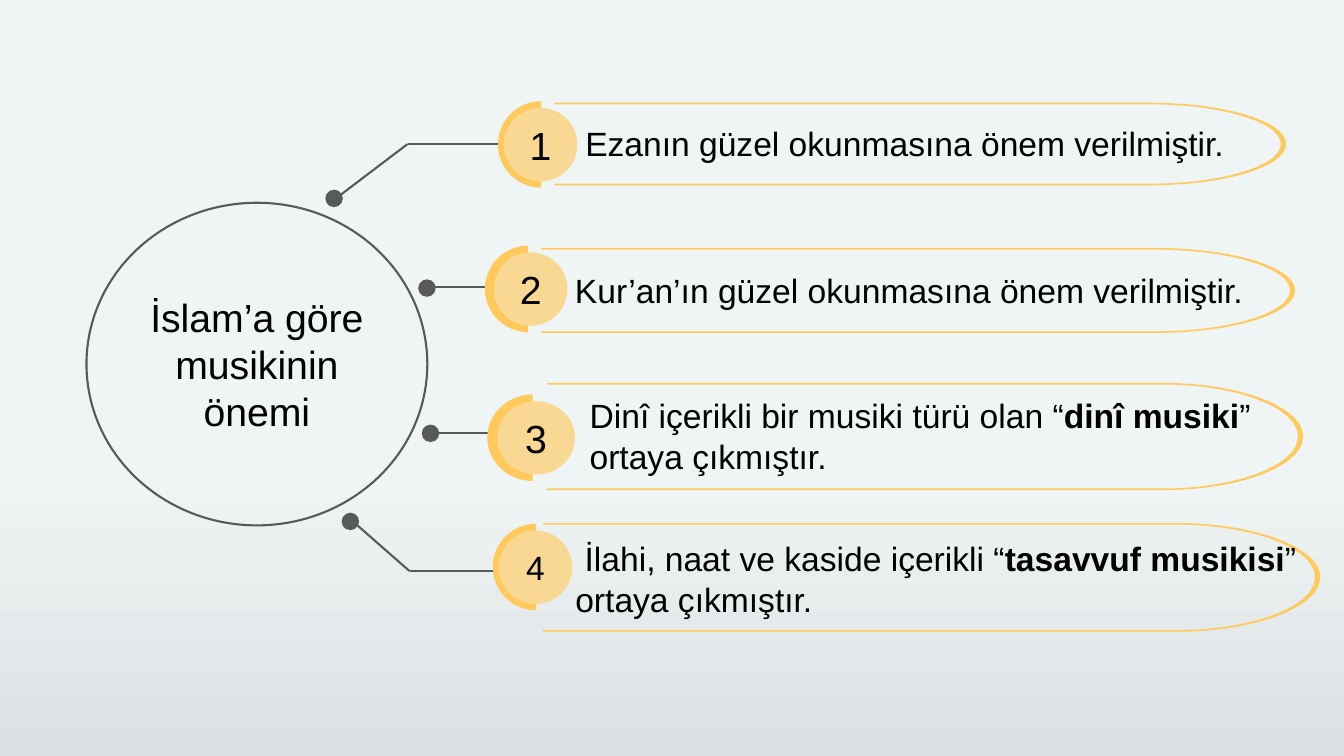
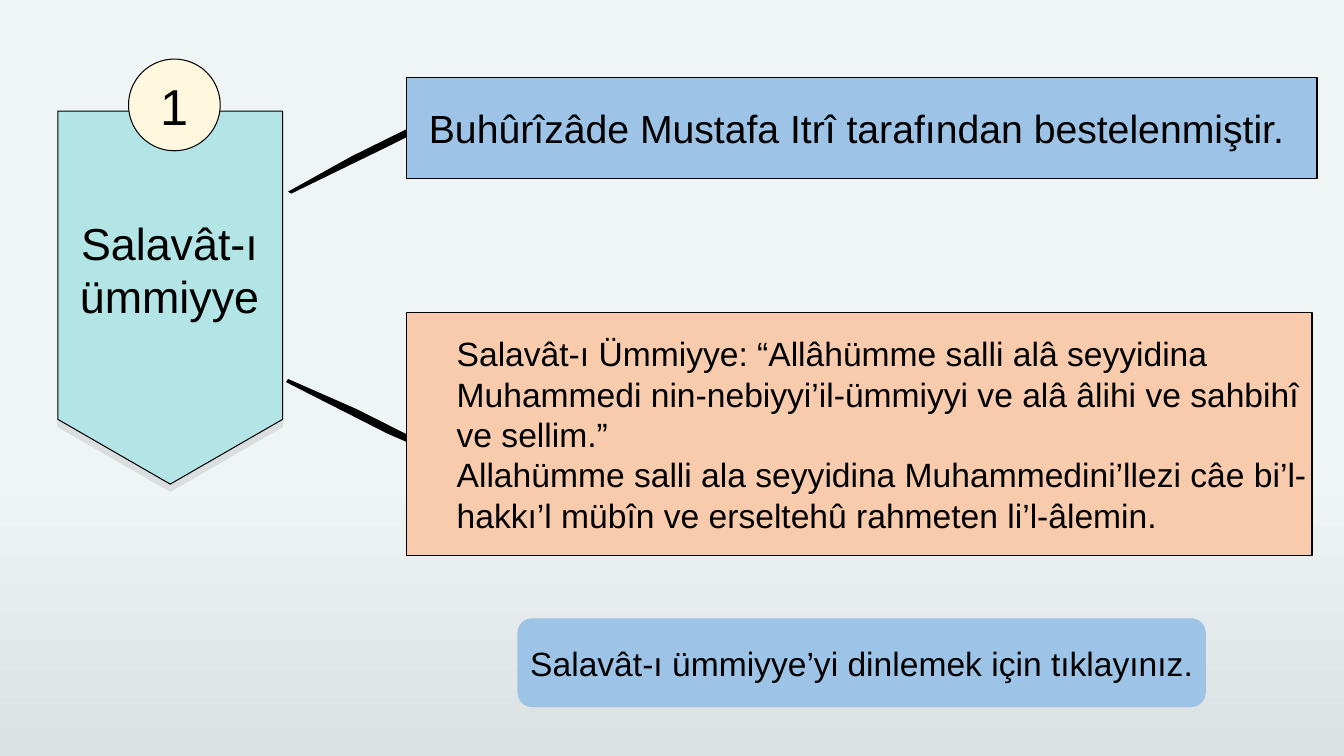
import lxml.etree
import pptx
import pptx.dml.color
import pptx.enum.shapes
import pptx.enum.text
import pptx.oxml.ns
import pptx.util

Cm = pptx.util.Cm
Pt = pptx.util.Pt
RGBColor = pptx.dml.color.RGBColor
PRESET = pptx.enum.shapes.MSO_SHAPE
STRAIGHT = pptx.enum.shapes.MSO_CONNECTOR.STRAIGHT
ALIGN = pptx.enum.text.PP_ALIGN
ANCHOR = pptx.enum.text.MSO_ANCHOR
qn = pptx.oxml.ns.qn

BLACK = RGBColor(0x00, 0x00, 0x00)
GREY = RGBColor(0x59, 0x59, 0x59)
AMBER = RGBColor(0xFF, 0xC9, 0x5C)
SAND = RGBColor(0xF9, 0xD8, 0x93)
CREAM = RGBColor(0xFF, 0xF8, 0xDE)
AQUA = RGBColor(0xB3, 0xE5, 0xE6)
BLUE = RGBColor(0x9D, 0xC3, 0xE6)
PEACH = RGBColor(0xF8, 0xCB, 0xAD)
MIST = RGBColor(0xEF, 0xF4, 0xF5)
FOG = RGBColor(0xDC, 0xE1, 0xE4)

ROUNDNESS = 0.55
CENTERED = {"alignment": ALIGN.CENTER}
LEFT = {"alignment": ALIGN.LEFT}
INSETS = ("margin_left", "margin_top", "margin_right", "margin_bottom")
MIDDLE = {"word_wrap": True, "vertical_anchor": ANCHOR.MIDDLE}
PADDED = MIDDLE | dict.fromkeys(INSETS, Cm(0.25))
TIGHT = MIDDLE | dict.fromkeys(INSETS, 0)
FLUSH_TOP = TIGHT | {"vertical_anchor": ANCHOR.TOP}


def paint(shape, fill=None, line=None, width=0.75):
    shape.shadow.inherit = False
    if fill is None:
        shape.fill.background()
    else:
        shape.fill.solid()
        shape.fill.fore_color.rgb = fill
    if line is None:
        shape.line.fill.background()
    else:
        shape.line.color.rgb = line
        shape.line.width = Pt(width)
    return shape


def write(shape, paragraphs, size, frame_format, paragraph_format, indent=0):
    frame = shape.text_frame
    for key, value in frame_format.items():
        setattr(frame, key, value)
    for index, pieces in enumerate(paragraphs):
        paragraph = frame.add_paragraph() if index else frame.paragraphs[0]
        for key, value in paragraph_format.items():
            setattr(paragraph, key, value)
        if indent:
            paragraph._p.get_or_add_pPr().set("marL", str(Cm(indent)))
        for position, piece in enumerate(pieces):
            run = paragraph.add_run()
            run.text = piece
            font_format = {"name": "Arial", "size": Pt(size), "bold": position == 1}
            for key, value in font_format.items():
                setattr(run.font, key, value)
            run.font.color.rgb = BLACK


deck = pptx.Presentation()
deck.slide_width = Cm(33.87)
deck.slide_height = Cm(19.05)
blank = deck.slide_layouts[6]

importance = deck.slides.add_slide(blank)
shapes = importance.shapes

backdrop = paint(shapes.add_shape(PRESET.RECTANGLE, 0, 0, deck.slide_width, deck.slide_height))
backdrop.fill.gradient()
backdrop.fill.gradient_angle = 270
for stop, (position, color) in zip(backdrop.fill.gradient_stops, ((0.62, MIST), (1, FOG))):
    stop.position = position
    stop.color.rgb = color
backdrop._element.nvSpPr.cNvPr.set("id", "100")
deck.slide_master.shapes._spTree.insert(2, backdrop._element)

topic = shapes.add_shape(PRESET.OVAL, Cm(2.18), Cm(5.11), Cm(8.59), Cm(8.13))
paint(topic, line=GREY, width=1.5)
write(topic, [["İslam’a göre musikinin önemi"]], 28, PADDED, CENTERED)

reasons = [
    {
        "number": "1", "size": 28,
        "pieces": ["Ezanın güzel okunmasına önem verilmiştir."],
        "text": (14.75, 3.1, 16.94, 1.02),
        "route": [(12.57, 3.63), (10.27, 3.63), (8.36, 5.08)], "dot": (8.2, 4.78),
        "disc": (12.55, 2.55, 2.18), "chip": (12.7, 1.85),
        "capsule": (13.97, 2.59, 32.41, 2.08, 3.43),
    },
    {
        "number": "2", "size": 28,
        "pieces": ["Kur’an’ın güzel okunmasına önem verilmiştir."],
        "text": (14.49, 6.81, 17.42, 1.02),
        "route": [(12.57, 7.24), (10.67, 7.24)], "dot": (10.54, 7.04),
        "disc": (12.22, 6.19, 2.18), "chip": (12.45, 1.85),
        "capsule": (13.64, 6.25, 32.64, 2.14, 3.53),
    },
    {
        "number": "3", "size": 28,
        "pieces": ["Dinî içerikli bir musiki türü olan “", "dinî musiki", "” ortaya çıkmıştır."],
        "text": (14.86, 9.96, 17.65, 2.06),
        "route": [(12.8, 10.9), (10.77, 10.9)], "dot": (10.63, 10.7),
        "disc": (12.28, 9.94, 2.29), "chip": (12.53, 1.96),
        "capsule": (13.79, 9.65, 32.84, 2.7, 3.53),
    },
    {
        "number": "4", "size": 24,
        "pieces": [" İlahi, naat ve kaside içerikli “", "tasavvuf musikisi", "” ortaya çıkmıştır."],
        "text": (14.5, 13.56, 18.26, 2.06),
        "route": [(12.47, 14.39), (10.32, 14.39), (8.94, 13.18)], "dot": (8.61, 12.92),
        "disc": (12.42, 13.2, 2.18), "chip": (12.57, 1.85),
        "capsule": (13.69, 13.18, 33.27, 2.74, 3.63),
    },
]

for reason in reasons:
    route = reason["route"]
    for start, end in zip(route, route[1:]):
        link = shapes.add_connector(STRAIGHT, *map(Cm, start + end))
        link.line.color.rgb = GREY
        link.line.width = Pt(1.5)
        lxml.etree.SubElement(link._element.spPr, qn("a:effectLst"))

    dot_left, dot_top = reason["dot"]
    for inset, size in ((0, 0.44), (0.11, 0.22)):
        dot = shapes.add_shape(PRESET.OVAL, Cm(dot_left + inset), Cm(dot_top + inset), Cm(size), Cm(size))
        paint(dot, GREY)

    disc_left, disc_top, disc_width = reason["disc"]
    disc = shapes.add_shape(PRESET.CHORD, Cm(disc_left), Cm(disc_top), Cm(disc_width), Cm(2.18))
    disc.adjustments[0] = 54
    disc.adjustments[1] = 162
    paint(disc, AMBER)

    chip_left, chip_width = reason["chip"]
    chip = shapes.add_shape(PRESET.OVAL, Cm(chip_left), Cm(disc_top + 0.17), Cm(chip_width), Cm(1.85))
    paint(chip, SAND)
    write(chip, [[reason["number"]]], reason["size"], PADDED, CENTERED)

    left, top, right, height, bend = reason["capsule"]
    center_x, center_y = right - bend, top + height / 2
    outline = []
    for radius_x, radius_y in ((bend, -height / 2), (bend - 0.13, height / 2 - 0.04)):
        tip = center_x + radius_x
        pull_x, pull_y = center_x + ROUNDNESS * radius_x, ROUNDNESS * radius_y
        outline += [
            (left, center_y + radius_y), (center_x, center_y + radius_y),
            (pull_x, center_y + radius_y), (tip, center_y + pull_y), (tip, center_y),
            (tip, center_y - pull_y), (pull_x, center_y - radius_y), (center_x, center_y - radius_y),
            (left, center_y - radius_y),
        ]
    points = [(Cm(x), Cm(y)) for x, y in outline]
    builder = shapes.build_freeform(*points[0])
    builder.add_line_segments(points[1:])
    capsule = paint(builder.convert_to_shape(), AMBER)
    segments = list(next(capsule._element.iter(qn("a:path"))))
    for first in (2, 5, 11, 14):
        curve = lxml.etree.Element(qn("a:cubicBezTo"))
        segments[first].addprevious(curve)
        for segment in segments[first:first + 3]:
            curve.append(segment[0])
            segment.getparent().remove(segment)

    sentence = shapes.add_textbox(*map(Cm, reason["text"]))
    write(sentence, [reason["pieces"]], 24, FLUSH_TOP, LEFT)

salavat = deck.slides.add_slide(blank)
shapes = salavat.shapes
pennant = shapes.add_shape(PRESET.PENTAGON, Cm(-0.41), Cm(4.67), Cm(9.4), Cm(5.66))
pennant.rotation = 90
pennant.adjustments[0] = 0.288
paint(pennant, AQUA, BLACK)
effects = pennant._element.spPr.find(qn("a:effectLst"))
shade = lxml.etree.SubElement(
    effects, qn("a:outerShdw"), blurRad="0", dist=str(Pt(5.2)), dir="5400000", rotWithShape="0"
)
shade_color = lxml.etree.SubElement(shade, qn("a:srgbClr"), val="999999")
lxml.etree.SubElement(shade_color, qn("a:alpha"), val="24000")

badge = shapes.add_shape(PRESET.OVAL, Cm(3.24), Cm(1.49), Cm(2.31), Cm(2.31))
paint(badge, CREAM, BLACK)
write(badge, [["1"]], 36, PADDED, CENTERED)

title = shapes.add_textbox(Cm(1.14), Cm(5.3), Cm(6.27), Cm(3))
write(title, [["Salavât-ı ümmiyye"]], 32, {"word_wrap": True}, CENTERED)

strokes = [
    [(7.26, 9.55), (8.99, 10.31), (10.46, 11.05), (10.46, 11.23), (9.75, 10.92), (7.21, 9.63)],
    [(10.36, 3.2), (10.36, 3.4), (9.7, 3.73), (7.34, 4.88), (7.26, 4.83), (8.86, 3.94)],
]
for stroke in strokes:
    points = [(Cm(x), Cm(y)) for x, y in stroke]
    taper = shapes.build_freeform(*points[0])
    taper.add_line_segments(points[1:])
    paint(taper.convert_to_shape(), BLACK)

panels = [
    (PRESET.RECTANGLE, (10.25, 1.96, 22.94, 2.54), BLUE, BLACK, 28, CENTERED, 0,
     ["Buhûrîzâde Mustafa Itrî tarafından bestelenmiştir. "]),
    (PRESET.RECTANGLE, (10.24, 7.88, 22.83, 6.12), PEACH, BLACK, 24, LEFT, 1.27,
     ["Salavât-ı Ümmiyye: “Allâhümme salli alâ seyyidina Muhammedi nin-nebiyyi’il-ümmiyyi "
      "ve alâ âlihi ve sahbihî ve sellim.”",
      "Allahümme salli ala seyyidina Muhammedini’llezi câe bi’l-hakkı’l mübîn "
      "ve erseltehû rahmeten li’l-âlemin."]),
    (PRESET.ROUNDED_RECTANGLE, (13.04, 15.58, 17.35, 2.24), BLUE, None, 24, CENTERED, 0,
     ["Salavât-ı ümmiyye’yi dinlemek için tıklayınız."]),
]
for preset, box, fill, line, size, alignment, indent, texts in panels:
    panel = paint(shapes.add_shape(preset, *map(Cm, box)), fill, line, 1)
    write(panel, [[text] for text in texts], size, TIGHT, alignment, indent)

deck.save("out.pptx")
